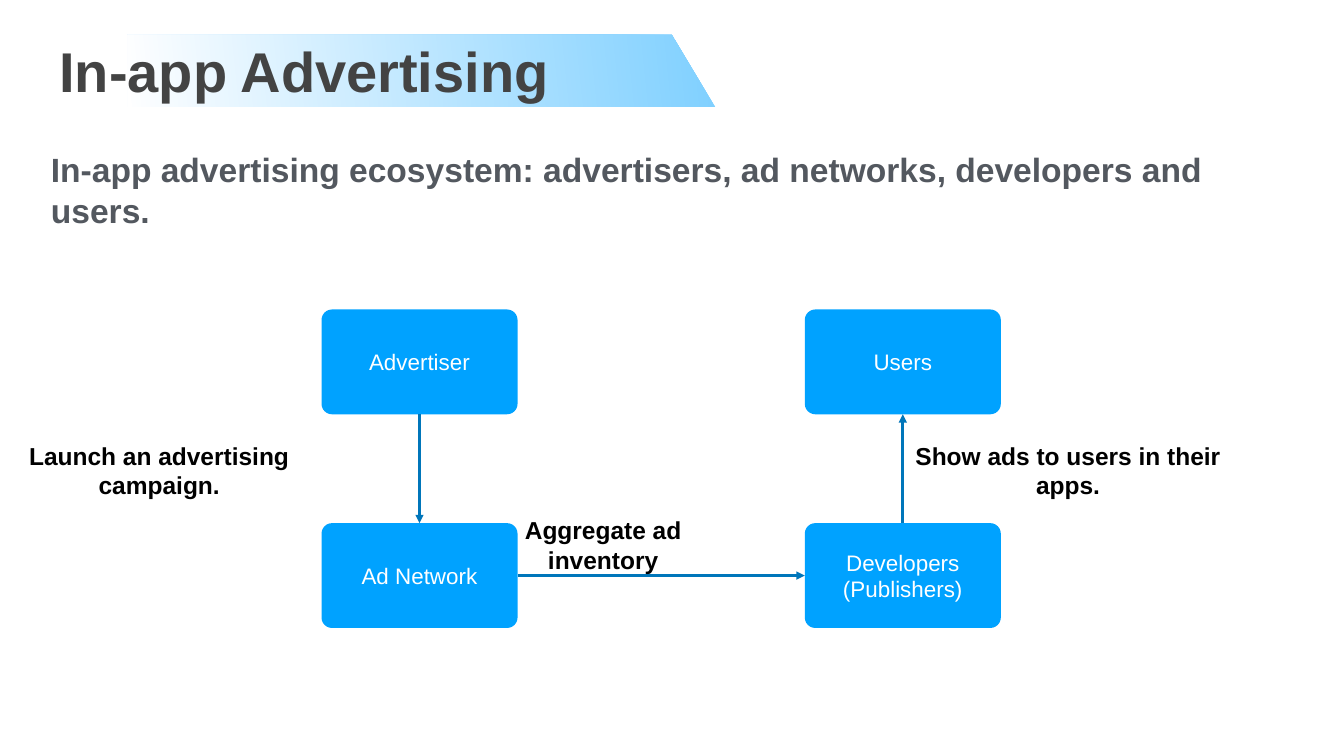
from lxml import etree
from pptx import Presentation
from pptx import util as u
from pptx.dml.color import RGBColor
from pptx.enum import shapes, text
from pptx.oxml import parse_xml
from pptx.oxml.ns import nsdecls, qn

BLUE = RGBColor(0x00, 0xA2, 0xFF)
LINE_BLUE = RGBColor(0x00, 0x76, 0xBA)
DARK = RGBColor(0x43, 0x43, 0x43)
GREY = RGBColor(0x53, 0x58, 0x5F)
BLACK = RGBColor(0, 0, 0)
WHITE = RGBColor(0xFF, 0xFF, 0xFF)

TITLE = "In-app Advertising"
SUBTITLE = "In-app advertising ecosystem: advertisers, ad networks, developers and users."
COLUMNS = (6.38, 15.97)
ROWS = (6.14, 10.38)
NODE_SIZE = (3.89, 2.08)
NODES = {
    "Advertiser": (0, 0),
    "Ad Network": (0, 1),
    "Developers (Publishers)": (1, 1),
    "Users": (1, 0),
}
TOP, LEFT, BOTTOM, RIGHT = range(4)
FLOWS = [
    ("Advertiser", BOTTOM, "Ad Network", TOP),
    ("Ad Network", RIGHT, "Developers (Publishers)", LEFT),
    ("Developers (Publishers)", TOP, "Users", BOTTOM),
]
LABELS = [
    ("Launch an advertising campaign.", 0.44, 8.68, 5.44),
    ("Aggregate ad inventory", 10.27, 10.16, 3.4),
    ("Show ads to users in their apps.", 18.02, 8.68, 6.35),
]
LABEL_HEIGHT = 1.3
BANNER = [(2.53, 0.69), (13.33, 0.69), (14.19, 2.12), (2.53, 2.12)]


def inches(*values):
    return [u.Inches(value) for value in values]


def write(box, words, size, color, bold=True, align=text.PP_ALIGN.LEFT):
    frame = box.text_frame
    frame.word_wrap = True
    frame.auto_size = text.MSO_AUTO_SIZE.NONE
    frame.vertical_anchor = text.MSO_ANCHOR.MIDDLE
    for side in ("left", "top", "right", "bottom"):
        setattr(frame, f"margin_{side}", u.Inches(0.06))
    frame.text = words
    para = frame.paragraphs[0]
    para.alignment = align
    para.font.name = "Arial"
    para.font.size = u.Pt(size)
    para.font.bold = bold
    para.font.color.rgb = color


def add_banner(page):
    points = [inches(*point) for point in BANNER]
    builder = page.shapes.build_freeform(*points[0])
    builder.add_line_segments(points[1:], close=True)
    banner = builder.convert_to_shape()
    banner.shadow.inherit = False
    banner.line.fill.background()
    banner.fill.background()
    stops = "".join(
        f'<a:gs pos="{position}"><a:srgbClr val="{color}"><a:alpha val="50000"/></a:srgbClr></a:gs>'
        for position, color in ((0, BLUE), (100000, WHITE)))
    gradient = parse_xml(
        f'<a:gradFill {nsdecls("a")} rotWithShape="1"><a:gsLst>{stops}</a:gsLst>'
        f'<a:lin ang="{174 * 60000}" scaled="0"/></a:gradFill>')
    properties = banner.element.spPr
    properties.replace(properties.find(qn("a:noFill")), gradient)
    page.shapes.element.insert(2, banner.element)


def add_node(page, name, column, row):
    node = page.shapes.add_shape(
        shapes.MSO_SHAPE.ROUNDED_RECTANGLE,
        *inches(COLUMNS[column], ROWS[row], *NODE_SIZE))
    node.adjustments[0] = 0.1
    node.shadow.inherit = False
    node.fill.solid()
    node.fill.fore_color.rgb = BLUE
    node.line.fill.background()
    write(node, name, 32, WHITE, False, text.PP_ALIGN.CENTER)
    return node


def add_arrow(page, start, start_side, end, end_side):
    arrow = page.shapes.add_connector(shapes.MSO_CONNECTOR.STRAIGHT, 0, 0, 0, 0)
    arrow.begin_connect(start, start_side)
    arrow.end_connect(end, end_side)
    arrow.line.color.rgb = LINE_BLUE
    arrow.line.width = u.Pt(4)
    outline = arrow.line._get_or_add_ln()
    etree.SubElement(outline, qn("a:tailEnd"), type="triangle")
    etree.SubElement(arrow.element.spPr, qn("a:effectLst"))


def main():
    deck = Presentation()
    deck.slide_width, deck.slide_height = inches(26.67, 15)
    page = deck.slides.add_slide(deck.slide_layouts[5])

    title = page.shapes.title
    title.left, title.top, title.width, title.height = inches(1.12, 0.68, 18.54, 1.43)
    write(title, TITLE, 80, DARK)
    add_banner(page)
    subtitle = page.shapes.add_textbox(*inches(0.95, 2.91, 24.76, 1.7))
    write(subtitle, SUBTITLE, 48, GREY)

    nodes = {name: add_node(page, name, *cell) for name, cell in NODES.items()}
    for start, start_side, end, end_side in FLOWS:
        add_arrow(page, nodes[start], start_side, nodes[end], end_side)
    for words, left, top, width in LABELS:
        label = page.shapes.add_textbox(*inches(left, top, width, LABEL_HEIGHT))
        write(label, words, 35, BLACK, align=text.PP_ALIGN.CENTER)

    deck.save("out.pptx")


if __name__ == "__main__":
    main()
